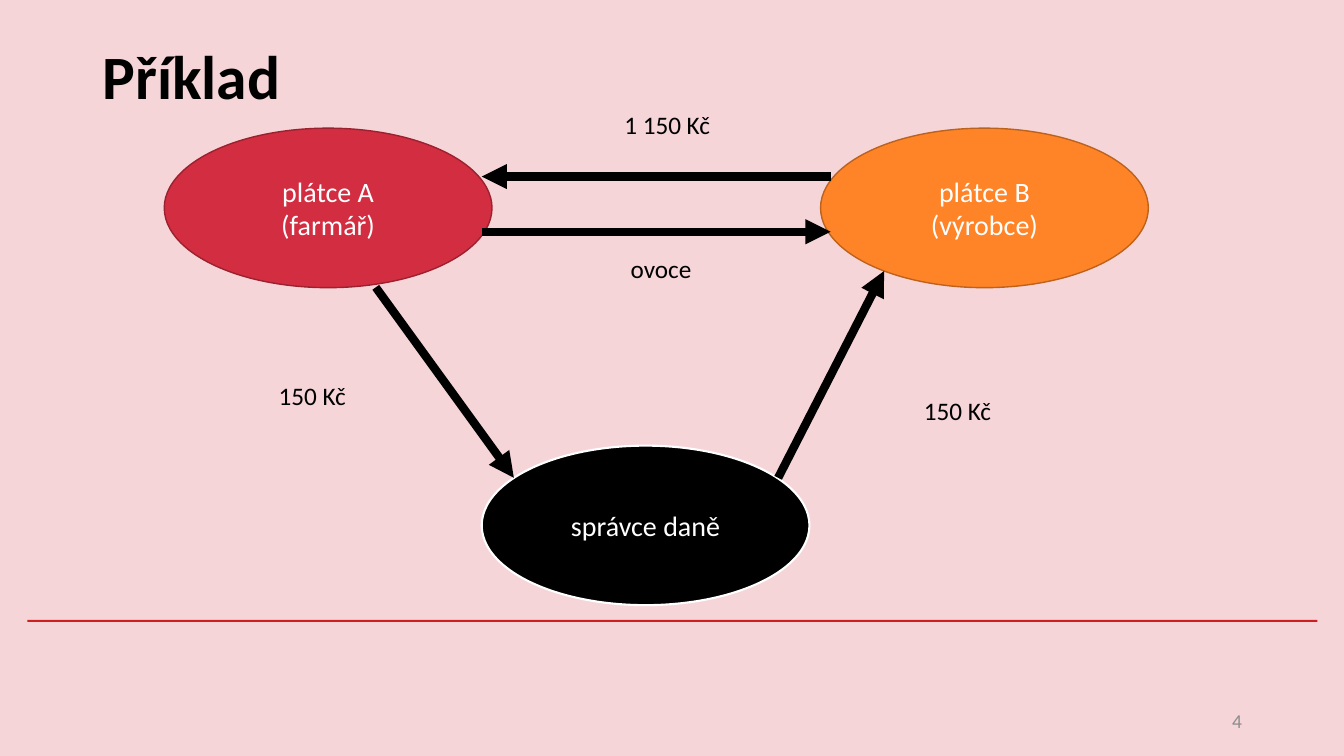
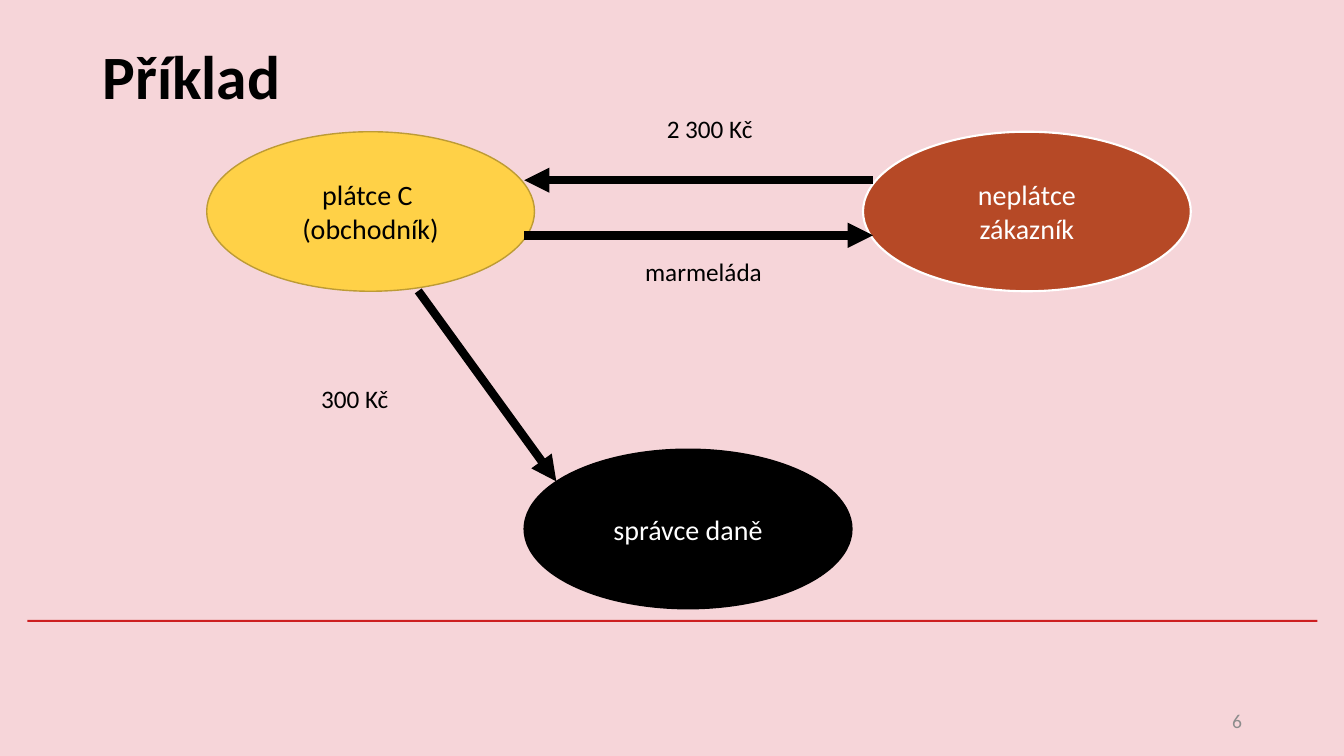
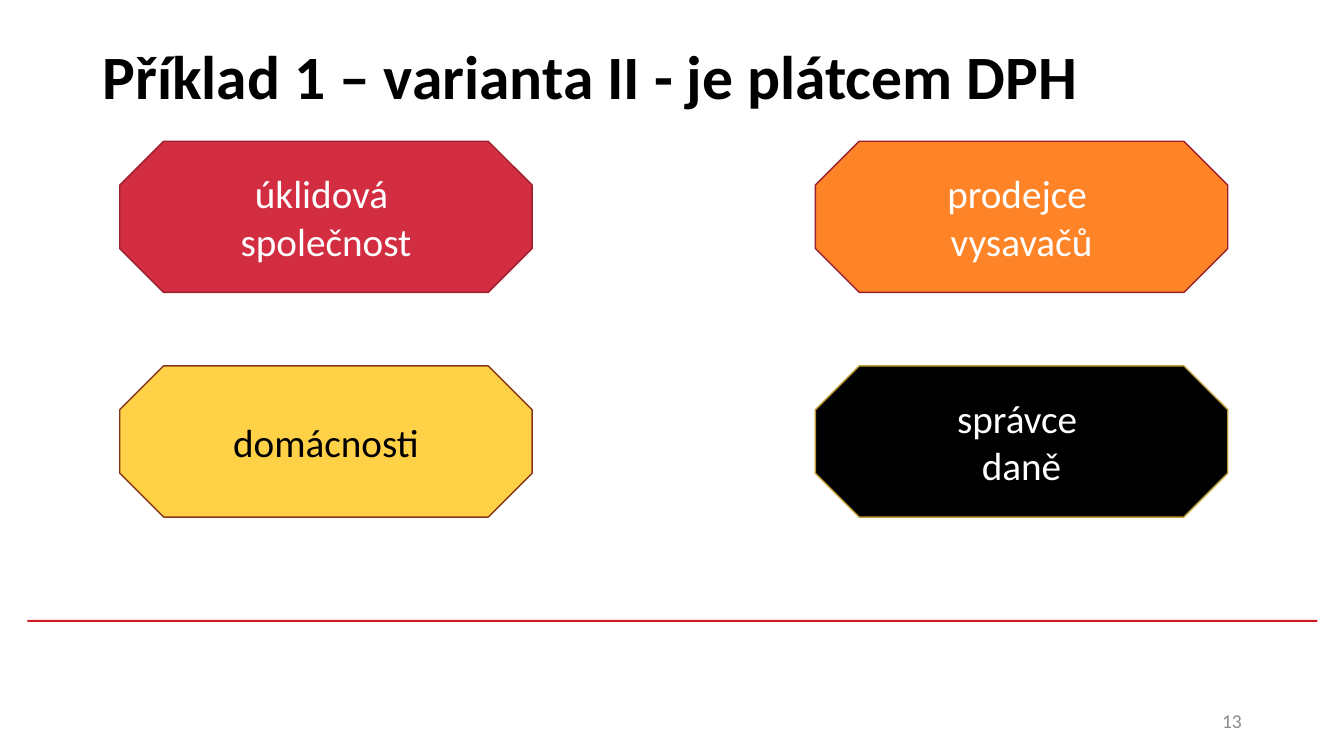
"""Build three slides of VAT examples: two payment flows and one set of parties."""
from lxml.etree import SubElement
from pptx import Presentation
from pptx.dml.color import RGBColor
from pptx.enum.shapes import MSO_CONNECTOR as CONN, MSO_SHAPE as SHAPE
from pptx.enum.text import MSO_ANCHOR as ANCHOR, MSO_AUTO_SIZE as AUTO, PP_ALIGN as ALIGN
from pptx.oxml.ns import qn
from pptx.util import Cm, Pt

FONT = "Calibri"
BLACK, WHITE, PINK = "000000", "FFFFFF", "F6D5D9"
RED, ORANGE, YELLOW, BROWN = "D22D40", "FF8427", "FFD147", "B64926"
DARK_RED, DARK_ORANGE, DARK_YELLOW, DARK_BROWN = "9B212F", "BD621D", "BD9B35", "87361C"
RULE, GREY = "CD1F21", "8C8C8C"
rgb = RGBColor.from_string


def write(sp, text, size, color, align=ALIGN.CENTER, anchor=ANCHOR.MIDDLE, wrap=True, bold=False):
    tf = sp.text_frame
    tf.text = text
    tf.word_wrap = wrap
    tf.auto_size = AUTO.NONE
    tf.vertical_anchor = anchor
    for p in tf.paragraphs:
        p.alignment = align
        for r in p.runs:
            r.font.name = FONT
            r.font.size = Pt(size)
            r.font.bold = bold
            r.font.color.rgb = rgb(color)


def add_filled(s, kind, x, y, w, h, fill, line=None, width=1):
    sp = s.shapes.add_shape(kind, Cm(x), Cm(y), Cm(w), Cm(h))
    sp.shadow.inherit = False
    sp.fill.solid()
    sp.fill.fore_color.rgb = rgb(fill)
    if line:
        sp.line.color.rgb = rgb(line)
        sp.line.width = Pt(width)
    else:
        sp.line.fill.background()
    return sp


prs = Presentation()
prs.slide_width, prs.slide_height = Cm(33.87), Cm(19.05)

slides = []
for title, number, background in [
    ("Příklad", "4", PINK),
    ("Příklad", "6", PINK),
    ("Příklad 1 – varianta II - je plátcem DPH", "13", WHITE),
]:
    s = prs.slides.add_slide(prs.slide_layouts[5])
    s.background.fill.solid()
    s.background.fill.fore_color.rgb = rgb(background)
    sp = s.shapes.title
    sp.left, sp.top, sp.width, sp.height = Cm(2.33), Cm(0.05), Cm(29.21), Cm(3.68)
    write(sp, title, 44, BLACK, align=ALIGN.LEFT, bold=True)
    add_filled(s, SHAPE.RECTANGLE, 0.69, 15.62, 32.51, 0.05, RULE)
    sp = s.shapes.add_textbox(Cm(23.93), Cm(17.65), Cm(7.62), Cm(1.02))
    write(sp, number, 14, GREY, align=ALIGN.RIGHT)
    slides.append(s)

party_spots = [(4.14, 3.23), (12.14, 11.23), (20.68, 3.23)]
arrow_spots = [
    (12.14, 5.84, 20.93, 5.84),
    (20.93, 4.45, 12.14, 4.45),
    (9.47, 7.24, 12.95, 12.04),
    (19.61, 12.04, 22.28, 6.83),
]
label_spots = [(13.21, 2.64, 7.21), (13.46, 6.25, 6.4), (4.67, 9.45, 6.4), (20.93, 9.83, 6.4)]

flows = [
    (0, 0, [
        ("plátce A (farmář)", RED, DARK_RED, 1, WHITE),
        ("správce daně", BLACK, WHITE, 1.5, WHITE),
        ("plátce B\v(výrobce)", ORANGE, DARK_ORANGE, 1, WHITE),
    ], ["1 150 Kč", "ovoce", "150 Kč", "150 Kč"]),
    (1.07, 0.09, [
        ("plátce C \v(obchodník)", YELLOW, DARK_YELLOW, 1, BLACK),
        ("správce daně", BLACK, BLACK, 1, WHITE),
        ("neplátce\vzákazník", BROWN, WHITE, 1.5, WHITE),
    ], ["2 300 Kč", "marmeláda", "300 Kč"]),
]
for s, (dx, dy, parties, labels) in zip(slides, flows):
    for (x, y), (text, fill, line, width, color) in zip(party_spots, parties):
        sp = add_filled(s, SHAPE.OVAL, x + dx, y + dy, 8.26, 4.02, fill, line, width)
        write(sp, text, 20, color)
        sp.text_frame.margin_left = sp.text_frame.margin_right = Cm(0.8)
    for (x1, y1, x2, y2), (x, y, w), text in zip(arrow_spots, label_spots, labels):
        arrow = s.shapes.add_connector(
            CONN.STRAIGHT, Cm(x1 + dx), Cm(y1 + dy), Cm(x2 + dx), Cm(y2 + dy))
        arrow.line.color.rgb = rgb(BLACK)
        arrow.line.width = Pt(6)
        SubElement(arrow.line._get_or_add_ln(), qn("a:tailEnd"), type="triangle")
        SubElement(arrow._element.spPr, qn("a:effectLst"))
        sp = s.shapes.add_textbox(Cm(x + dx), Cm(y + dy), Cm(w), Cm(1.02))
        write(sp, text, 18, BLACK, anchor=ANCHOR.TOP)

octagons = [
    ("úklidová \nspolečnost", RED, DARK_RED, WHITE),
    ("prodejce \nvysavačů", ORANGE, DARK_RED, WHITE),
    ("domácnosti", YELLOW, DARK_BROWN, BLACK),
    ("správce \ndaně", BLACK, DARK_YELLOW, WHITE),
]
for i, (text, fill, line, color) in enumerate(octagons):
    row, col = divmod(i, 2)
    sp = add_filled(slides[2], SHAPE.OCTAGON, 3.02 + 17.53 * col, 3.56 + 5.66 * row,
                    10.39, 3.81, fill, line)
    sp.adjustments[0] = 0.29
    write(sp, text, 28, color, wrap=False)

prs.save("out.pptx")
